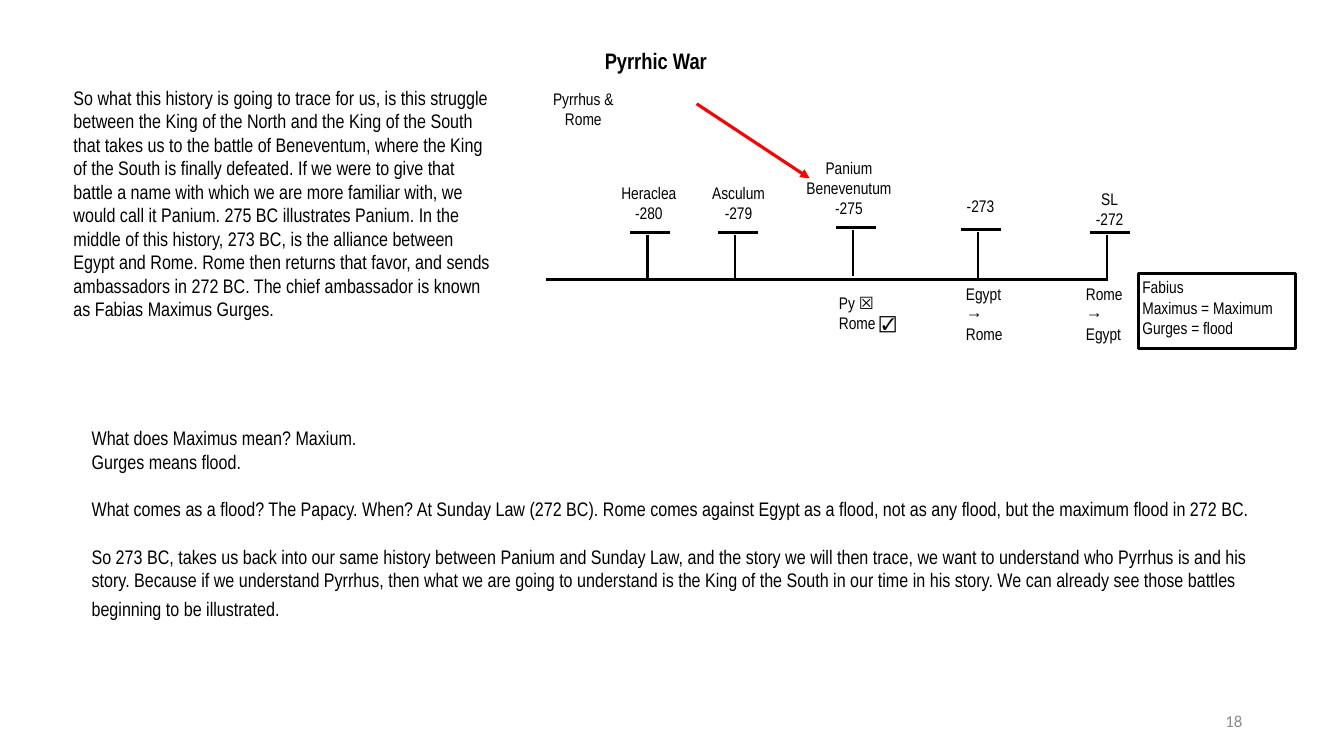
from lxml import etree
from pptx import Presentation
from pptx.dml.color import RGBColor
from pptx.enum import shapes, text
from pptx.oxml import ns
from pptx.util import Inches, Pt

# Content: boxes are (left, top, width, height) in inches
BLACK, RED, GREY = "000000", "FF0000", "8C8C8C"
NARROW = "Arial Narrow"
CENTER, RIGHT = text.PP_ALIGN.CENTER, text.PP_ALIGN.RIGHT

TITLE = ("Pyrrhic War", (5.68, 0.43, 1.65, 0.34))
PARTIES = ("Pyrrhus & Rome", (5.44, 0.84, 0.69, 0.55))
PAGE_NUMBER = ("18", (9.42, 6.95, 3, 0.4))

# Battles and events: lines, label box, stem x, cap height
EVENTS = [
    (["Heraclea", "-280"], (6.09, 1.77, 0.69, 0.58), 6.42, 2.31),
    (["Asculum", "-279"], (6.98, 1.77, 0.69, 0.53), 7.29, 2.31),
    (["Panium", "Benevenutum", "-275"], (7.86, 1.52, 1.12, 0.75), 8.46, 2.26),
    (["-273"], (9.38, 1.9, 0.69, 0.31), 9.7, 2.28),
    (["SL", "-272"], (10.66, 1.83, 0.69, 0.52), 10.98, 2.31),
]
OUTCOMES = [
    (["Py ☒", "Rome ☑"], (8.28, 2.86, 0.75, 0.69)),
    (["Egypt", "→", "Rome"], (9.54, 2.77, 0.56, 0.69)),
    (["Rome", "→", "Egypt"], (10.73, 2.77, 0.56, 0.69)),
]
FABIUS = (["Fabius", "Maximus = Maximum", "Gurges = flood"],
          (11.29, 2.71, 1.56, 0.75))

HISTORY = (
    "So what this history is going to trace for us, is this struggle between "
    "the King of the North and the King of the South that takes us to the "
    "battle of Beneventum, where the King of the South is finally defeated. "
    "If we were to give that battle a name with which we are more familiar "
    "with, we would call it Panium. 275 BC illustrates Panium. In the middle "
    "of this history, 273 BC, is the alliance between Egypt and Rome. Rome "
    "then returns that favor, and sends ambassadors in 272 BC. The chief "
    "ambassador is known as Fabias Maximus Gurges.",
    (0.63, 0.8, 4.39, 2.46))
MEANING = ([
    "What does Maximus mean? Maxium.",
    "Gurges means flood.",
    "What comes as a flood? The Papacy. When? At Sunday Law (272 BC). Rome "
    "comes against Egypt as a flood, not as any flood, but the maximum flood "
    "in 272 BC.",
    "So 273 BC, takes us back into our same history between Panium and Sunday "
    "Law, and the story we will then trace, we want to understand who Pyrrhus "
    "is and his story. Because if we understand Pyrrhus, then what we are "
    "going to understand is the King of the South in our time in his story. "
    "We can already see those battles beginning to be illustrated.",
], (0.81, 4.18, 11.95, 2.05))

AXIS = (5.42, 2.77, 10.98, 2.77)
POINTER = (6.91, 1.03, 8.03, 1.77)
CAP_LEFT, CAP_WIDTH, STEM_GAP, STEM_HEIGHT = 0.17, 0.4, 0.02, 0.46
INSET = 0.04

prs = Presentation()
prs.slide_width, prs.slide_height = Inches(13.33), Inches(7.5)
slide = prs.slides.add_slide(prs.slide_layouts[6])


def color(value):
    return RGBColor.from_string(value)


def style(run, size, font=NARROW, ink=BLACK, bold=False):
    run.font.name, run.font.size, run.font.bold = font, Pt(size), bold
    run.font.color.rgb = color(ink)


def write(shape, lines, size=12, inset=INSET, align=text.PP_ALIGN.LEFT, **look):
    frame = shape.text_frame
    frame.word_wrap = True
    frame.vertical_anchor = text.MSO_ANCHOR.TOP
    if inset is not None:
        frame.margin_left = frame.margin_right = Inches(inset)
        frame.margin_top = frame.margin_bottom = Inches(inset)
    frame.text = "\n".join(lines)
    for paragraph in frame.paragraphs:
        paragraph.alignment = align
        for run in paragraph.runs:
            style(run, size, **look)
    return frame


def add_text(lines, box, **options):
    return write(slide.shapes.add_textbox(*map(Inches, box)), lines, **options)


def add_line(ends, ink=BLACK, width=2, arrow=False):
    line = slide.shapes.add_connector(
        shapes.MSO_CONNECTOR.STRAIGHT, *map(Inches, ends))
    line.line.color.rgb = color(ink)
    line.line.width = Pt(width)
    if arrow:
        etree.SubElement(line.line._get_or_add_ln(), ns.qn("a:tailEnd"),
                         type="triangle")
    etree.SubElement(line._element.spPr, ns.qn("a:effectLst"))


# Title, parties and page number
add_text([TITLE[0]], TITLE[1], size=16, align=CENTER, bold=True)
add_text([PARTIES[0]], PARTIES[1], align=CENTER)
number = add_text([PAGE_NUMBER[0]], PAGE_NUMBER[1], inset=None, align=RIGHT,
                  font="Calibri", ink=GREY)
number.vertical_anchor = text.MSO_ANCHOR.MIDDLE

# Timeline
add_line(AXIS)
for label, box, x, cap_y in EVENTS:
    add_text(label, box, align=CENTER)
    cap_x, stem_y = x - CAP_LEFT, cap_y + STEM_GAP
    add_line((cap_x, cap_y, cap_x + CAP_WIDTH, cap_y))
    add_line((x, stem_y, x, stem_y + STEM_HEIGHT))
add_line(POINTER, ink=RED, width=2.25, arrow=True)

# Outcomes below the timeline, with check marks in their own font
for lines, box in OUTCOMES:
    for paragraph in add_text(lines, box).paragraphs:
        if paragraph.text[-1] in "☒☑":
            word, mark = paragraph.runs[0], paragraph.add_run()
            word.text, mark.text = paragraph.text[:-1], paragraph.text[-1]
            style(mark, 12, font="Arial")

# Meaning of the ambassador's name
fabius = slide.shapes.add_shape(shapes.MSO_SHAPE.RECTANGLE,
                                *map(Inches, FABIUS[1]))
fabius.shadow.inherit = False
fabius.fill.background()
fabius.line.color.rgb = color(BLACK)
fabius.line.width = Pt(2)
write(fabius, FABIUS[0])

# Running text
add_text([HISTORY[0]], HISTORY[1], size=14, inset=None)
meaning = add_text(MEANING[0], MEANING[1], size=14, inset=None)
for paragraph in meaning.paragraphs[2:]:
    paragraph.space_before = Pt(17)
# A larger closing space makes the last line taller
closing = meaning.paragraphs[-1].add_run()
closing.text = " "
style(closing, 18, font="Calibri")

prs.save("out.pptx")
